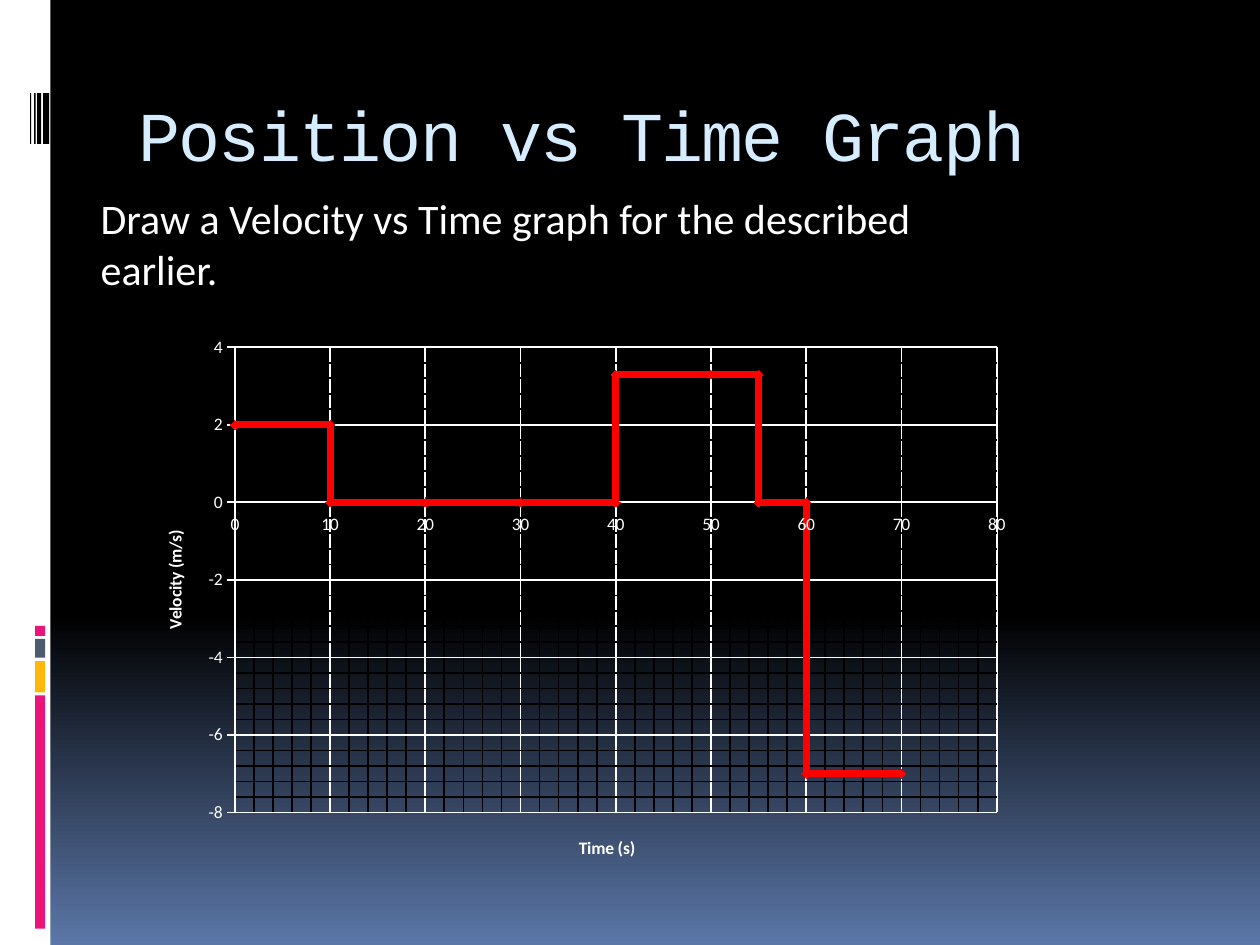
from copy import deepcopy
from dataclasses import dataclass

from lxml import etree
from pptx import Presentation
from pptx import util as u
from pptx.chart.data import XyChartData
from pptx.dml.color import RGBColor
from pptx.enum import chart as ch
from pptx.enum import shapes, text
from pptx.oxml.ns import qn


@dataclass(frozen=True)
class Theme:
    black: str = "000000"
    white: str = "FFFFFF"
    sky: str = "5B77A8"
    pink: str = "EA157A"
    amber: str = "FEB80A"
    slate: str = "4E5B6F"
    heading: str = "D6ECFF"
    curve: str = "FF0000"
    heading_font: str = "Courier New"
    body_font: str = "Calibri"
    heading_size: int = 40
    body_size: int = 24
    chart_size: int = 10


THEME = Theme()

# Time (s) and velocity (m/s)
MOTION = [(0, 2), (10, 2), (10, 0), (20, 0), (30, 0), (40, 0), (40, 3.3),
          (50, 3.3), (55, 3.3), (55, 0), (60, 0), (60, -7), (70, -7)]


def rgb(colour):
    return RGBColor.from_string(colour)


def cm_box(*lengths):
    return [u.Cm(length) for length in lengths]


def paint_background(slide):
    fill = slide.background.fill
    fill.gradient()
    fill.gradient_angle = 270
    stop_list = slide.element.find(".//" + qn("a:gsLst"))
    stop_list.insert(1, deepcopy(stop_list[0]))
    colours = (THEME.black, THEME.black, THEME.sky)
    for stop, position, colour in zip(fill.gradient_stops, (0, 0.65, 1), colours):
        stop.position = position
        stop.color.rgb = rgb(colour)


def add_bar(slide, box, colour):
    bar = slide.shapes.add_shape(shapes.MSO_SHAPE.RECTANGLE, *cm_box(*box))
    bar.shadow.inherit = False
    bar.fill.solid()
    bar.fill.fore_color.rgb = rgb(colour)
    bar.line.fill.background()


def add_side_strip(slide):
    add_bar(slide, (0, 0, 1.02, 19.05), THEME.white)
    for top, height, colour in ((14.02, 4.7, THEME.pink), (13.33, 0.63, THEME.amber),
                                (12.88, 0.38, THEME.slate), (12.62, 0.2, THEME.pink)):
        add_bar(slide, (0.71, top, 0.2, height), colour)
    for left, width in ((0.87, 0.12), (0.75, 0.08), (0.69, 0.03), (0.61, 0.02)):
        add_bar(slide, (left, 1.88, width, 1.02), THEME.black)


def style_font(font, size, colour, name=THEME.body_font, bold=False):
    font.size = u.Pt(size)
    font.color.rgb = rgb(colour)
    font.name = name
    font.bold = bold


def add_text(slide, box, wording, anchor, *font_style):
    frame = slide.shapes.add_textbox(*cm_box(*box)).text_frame
    frame.word_wrap = True
    frame.vertical_anchor = anchor
    paragraph = frame.paragraphs[0]
    paragraph.text = wording
    style_font(paragraph.font, *font_style)
    return paragraph


def style_line(line, colour, points):
    line.color.rgb = rgb(colour)
    line.width = u.Pt(points)


def style_gridlines(axis):
    """Draw black minor lines and white major lines of equal width."""
    axis.has_major_gridlines = axis.has_minor_gridlines = True
    major_line = axis.major_gridlines.format.line
    style_line(major_line, THEME.black, 1)
    major, minor = (axis._element.find(qn(tag))
                    for tag in ("c:majorGridlines", "c:minorGridlines"))
    minor.append(deepcopy(major.find(qn("c:spPr"))))
    style_line(major_line, THEME.white, 1)


def style_axis(axis, title, low, high, major):
    """Set the scale with five minor steps to each major one."""
    axis.minimum_scale, axis.maximum_scale = low, high
    axis.major_unit = major
    axis.minor_unit = major / 5
    style_gridlines(axis)
    style_line(axis.format.line, THEME.white, 1)
    axis.major_tick_mark = ch.XL_TICK_MARK.OUTSIDE
    axis.minor_tick_mark = ch.XL_TICK_MARK.NONE
    axis.tick_labels.number_format = "General"
    axis.tick_labels.number_format_is_linked = False
    paragraph = axis.axis_title.text_frame.paragraphs[0]
    paragraph.text = title
    style_font(paragraph.font, THEME.chart_size, THEME.white, bold=True)


def place_plot(chart, **fractions):
    """Fix the inner plot area as fractions of the chart."""
    plot_area = chart.element.find(".//" + qn("c:plotArea"))
    for old in plot_area.findall(qn("c:layout")):
        plot_area.remove(old)
    layout = etree.Element(qn("c:layout"))
    manual = etree.SubElement(layout, qn("c:manualLayout"))
    settings = {"layoutTarget": "inner", "xMode": "edge", "yMode": "edge", **fractions}
    for tag, value in settings.items():
        etree.SubElement(manual, qn("c:" + tag)).set("val", str(value))
    plot_area.insert(0, layout)


def add_velocity_chart(slide, box):
    data = XyChartData()
    velocity = data.add_series("Series 1")
    for time, speed in MOTION:
        velocity.add_data_point(time, speed)
    chart = slide.shapes.add_chart(
        ch.XL_CHART_TYPE.XY_SCATTER_LINES, *cm_box(*box), data).chart
    chart.has_title = chart.has_legend = False
    style_font(chart.font, THEME.chart_size, THEME.white)
    style_axis(chart.category_axis, "Time (s)", 0, 80, 10)
    style_axis(chart.value_axis, "Velocity (m/s)", -8, 4, 2)
    place_plot(chart, x=0.11, y=0.04, w=0.86, h=0.83)

    plot = chart.plots[0]
    plot.vary_by_categories = False
    curve = plot.series[0]
    style_line(curve.format.line, THEME.curve, 4)
    curve.marker.style = ch.XL_MARKER_STYLE.DIAMOND
    curve.marker.size = 5
    curve.marker.format.fill.solid()
    curve.marker.format.fill.fore_color.rgb = rgb(THEME.curve)
    curve.marker.format.line.color.rgb = rgb(THEME.curve)


def main():
    deck = Presentation()
    deck.slide_width, deck.slide_height = cm_box(25.4, 19.05)
    slide = deck.slides.add_slide(deck.slide_layouts[6])
    paint_background(slide)
    add_side_strip(slide)
    heading = add_text(slide, (2.54, 1.42, 21.59, 2.54), "Position vs Time Graph",
                       text.MSO_ANCHOR.MIDDLE, THEME.heading_size, THEME.heading,
                       THEME.heading_font)
    heading.runs[0].font._element.set("spc", "-100")
    add_velocity_chart(slide, (2.77, 6.55, 17.86, 11.3))
    add_text(slide, (1.78, 3.76, 18.64, 2.31),
             "Draw a Velocity vs Time graph for the described earlier.",
             text.MSO_ANCHOR.TOP, THEME.body_size, THEME.white)
    deck.save("out.pptx")


if __name__ == "__main__":
    main()
